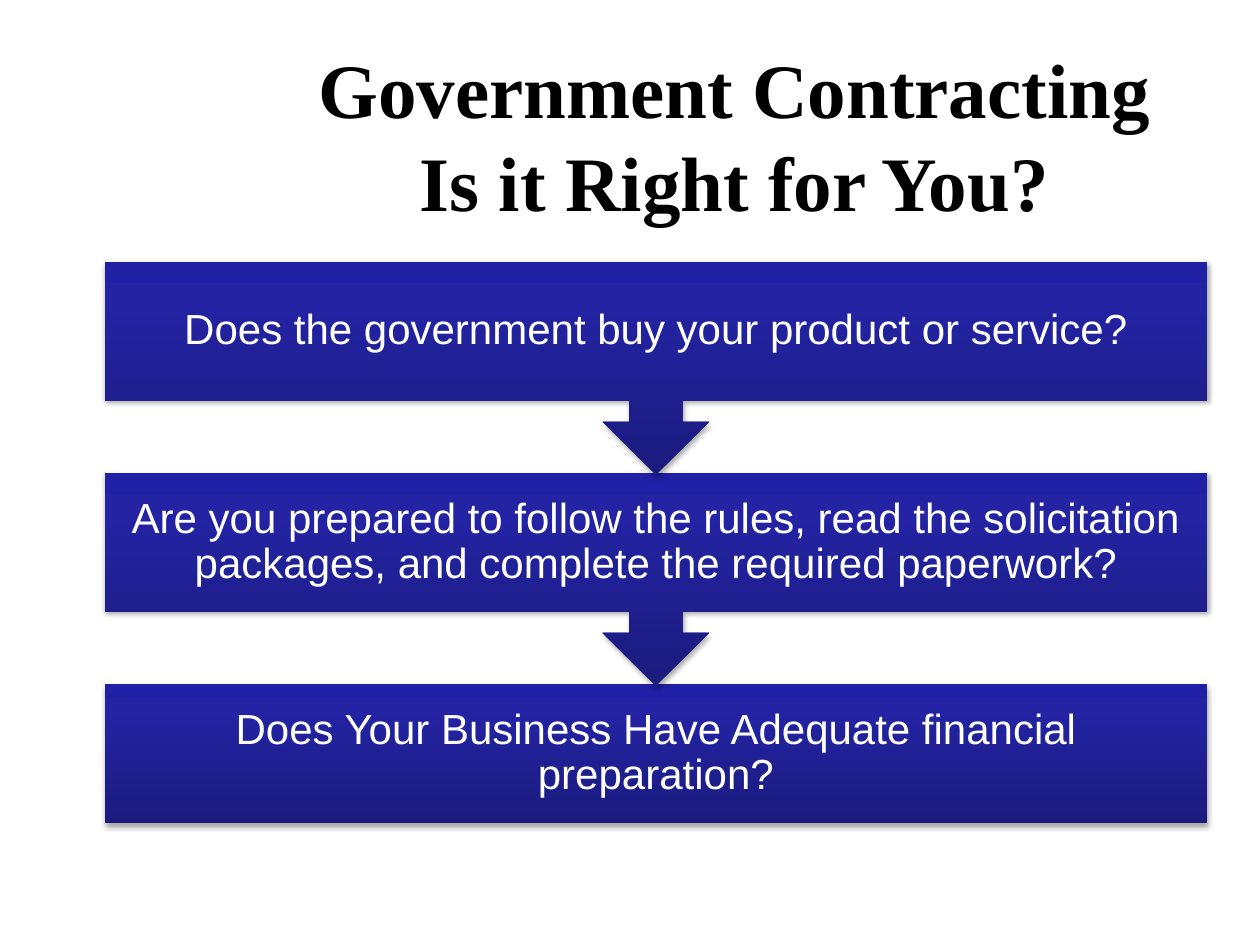
"""Build a slide with a title and three questions joined by arrows."""
from dataclasses import dataclass

from pptx import Presentation, oxml
from pptx.dml.color import RGBColor
from pptx.enum import shapes, text
from pptx.util import Inches, Pt

HUE = {"ink": "000000", "page": "FFFFFF", "deep": "1B1B7E",
       "mid": "2323A3", "top": "2020A6"}
NS = 'xmlns:a="http://schemas.openxmlformats.org/drawingml/2006/main"'
FILL = f"""<a:gradFill {NS} rotWithShape="1"><a:gsLst>
<a:gs pos="0"><a:srgbClr val="{HUE['deep']}"/></a:gs>
<a:gs pos="80000"><a:srgbClr val="{HUE['mid']}"/></a:gs>
<a:gs pos="100000"><a:srgbClr val="{HUE['top']}"/></a:gs>
</a:gsLst><a:lin ang="16200000" scaled="0"/></a:gradFill>"""
SHADE = f"""<a:effectLst {NS}><a:outerShdw blurRad="{Pt(3.1)}" dist="{Pt(1.8)}"
dir="5400000" rotWithShape="0"><a:srgbClr val="{HUE['ink']}">
<a:alpha val="35000"/></a:srgbClr></a:outerShdw></a:effectLst>"""
LEFT, TOP, WIDTH, STEP = 0.83, 2.08, 8.75, 1.675


@dataclass
class Step:
    """One question, its outline and its height in inches."""
    words: str
    kind: shapes.MSO_SHAPE
    high: float


ARROW = shapes.MSO_SHAPE.DOWN_ARROW_CALLOUT
STEPS = [
    Step("Does the government buy your product or service?", ARROW, 1.69),
    Step("Are you prepared to follow the rules, read the solicitation "
         "packages, and complete the required paperwork?", ARROW, 1.69),
    Step("Does Your Business Have Adequate financial preparation?",
         shapes.MSO_SHAPE.RECTANGLE, 1.1),
]


def write(shape, words: str, *, face: str, size: float, hue: str, space,
          bold: bool = False, pad: float = 0.1, head: float = 0.05,
          anchor=text.MSO_ANCHOR.MIDDLE) -> None:
    """Put centred, formatted text into a shape."""
    frame = shape.text_frame
    frame.word_wrap = True
    frame.auto_size = text.MSO_AUTO_SIZE.NONE
    frame.vertical_anchor = anchor
    frame.margin_left = frame.margin_right = Inches(pad)
    frame.margin_top = frame.margin_bottom = Inches(head)
    para = frame.paragraphs[0]
    para.text = words
    para.alignment = text.PP_ALIGN.CENTER
    para.line_spacing = space
    for run in para.runs:
        run.font.name = face
        run.font.size = Pt(size)
        run.font.bold = bold
        run.font.color.rgb = RGBColor.from_string(HUE[hue])


def draw(slide, step: Step, row: int) -> None:
    """Draw one question box in its row."""
    box = slide.shapes.add_shape(
        step.kind, Inches(LEFT), Inches(TOP + row * STEP),
        Inches(WIDTH), Inches(step.high))
    box.line.fill.background()
    props = box._element.spPr
    props.insert(2, oxml.parse_xml(FILL))
    props.append(oxml.parse_xml(SHADE))
    write(box, step.words, face="Arial", size=24, hue="page", space=0.9,
          pad=0.19, head=0.19)


def main() -> None:
    """Build and save the slide."""
    deck = Presentation()
    deck.slide_width, deck.slide_height = Inches(10), Inches(7.5)
    slide = deck.slides.add_slide(deck.slide_layouts[5])
    title = slide.shapes.title
    title.left, title.top = Inches(1.33), Inches(0.25)
    title.width, title.height = Inches(9), Inches(1.25)
    write(title, "Government Contracting\vIs it Right for You?",
          face="Times New Roman", size=44, hue="ink", bold=True,
          space=Pt(53), head=0.08, anchor=text.MSO_ANCHOR.TOP)
    for row, step in reversed(list(enumerate(STEPS))):
        draw(slide, step, row)
    deck.save("out.pptx")


if __name__ == "__main__":
    main()
